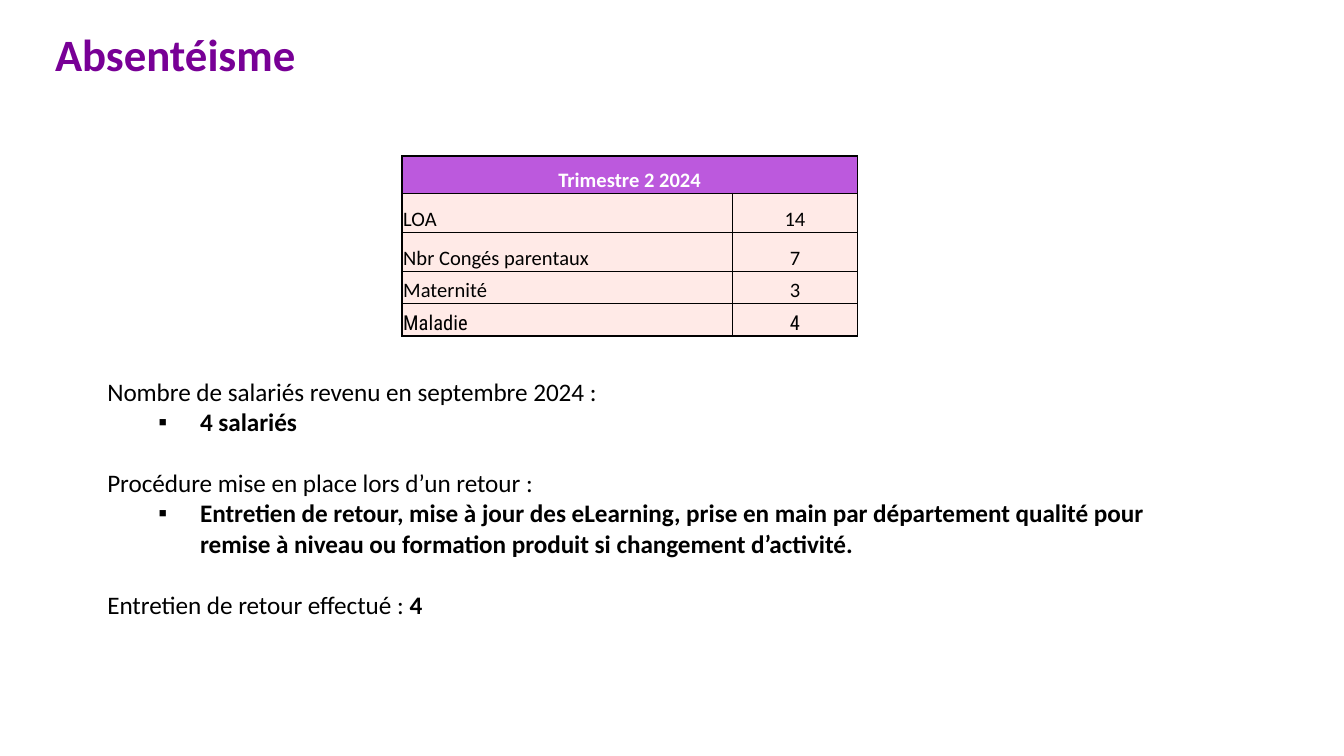
from lxml.etree import SubElement
from pptx import Presentation
from pptx.dml.color import RGBColor
from pptx.enum.text import MSO_ANCHOR as Anchor, PP_ALIGN as Align
from pptx.oxml.ns import qn
from pptx.util import Inches, Pt

PURPLE = RGBColor(0x78, 0x00, 0x96)
ORCHID = RGBColor(0xBC, 0x59, 0xDD)
BLUSH = RGBColor(0xFF, 0xEA, 0xE7)
BLACK = RGBColor(0, 0, 0)
WHITE = RGBColor(0xFF, 0xFF, 0xFF)
FONT = "Calibri"
LAST_ROW_FONT = "Roboto Condensed"


def set_font(font, size, color, bold=False, name=FONT):
    font.name, font.size, font.bold = name, Pt(size), bold
    font.color.rgb = color


def add_borders(cell):
    properties = cell._tc.get_or_add_tcPr()
    for side in ("a:lnL", "a:lnR", "a:lnT", "a:lnB"):
        line = SubElement(properties, qn(side), w=str(Pt(1)))
        fill = SubElement(line, qn("a:solidFill"))
        SubElement(fill, qn("a:srgbClr"), val=str(BLACK))


deck = Presentation()
deck.slide_width = Inches(10)
deck.slide_height = deck.slide_width * 9 // 16
page = deck.slides.add_slide(deck.slide_layouts[5])

# Title
title = page.shapes.title
title.left, title.top = Inches(0.31), Inches(0.22)
title.width, title.height = Inches(5.51), Inches(0.41)
title.text_frame.word_wrap = False
title.text_frame.vertical_anchor = Anchor.MIDDLE
title.text_frame.text = "Absentéisme"
para = title.text_frame.paragraphs[0]
para.alignment = Align.LEFT
para.line_spacing = 0.9
set_font(para.font, 24, PURPLE, bold=True)

# Absence table
rows = [
    ("Trimestre 2 2024", ""),
    ("LOA", "14"),
    ("Nbr Congés parentaux", "7"),
    ("Maternité", "3"),
    ("Maladie", "4"),
]
column_widths = (2.46, 0.93)
row_heights = (0.28, 0.29, 0.29, 0.24, 0.24)
table = page.shapes.add_table(
    len(rows), len(column_widths), Inches(2.99), Inches(1.16),
    Inches(sum(column_widths)), Inches(sum(row_heights))).table
for column, width in zip(table.columns, column_widths):
    column.width = Inches(width)
for row, height in zip(table.rows, row_heights):
    row.height = Inches(height)
table.cell(0, 0).merge(table.cell(0, 1))

for r, values in enumerate(rows):
    header = r == 0
    for c, value in enumerate(values):
        cell = table.cell(r, c)
        add_borders(cell)
        cell.fill.solid()
        cell.fill.fore_color.rgb = ORCHID if header else BLUSH
        cell.vertical_anchor = Anchor.BOTTOM
        cell.margin_left = cell.margin_right = cell.margin_top = Inches(0.01)
        cell.margin_bottom = 0
        cell.text = value
        para = cell.text_frame.paragraphs[0]
        para.alignment = Align.CENTER if header or c == 1 else Align.LEFT
        set_font(para.font, 11, WHITE if header else BLACK, bold=header,
                 name=LAST_ROW_FONT if r == len(rows) - 1 else FONT)

# Return to work: each line is (plain text, bold text); bold-only lines are bullets
lines = [
    ("Nombre de salariés revenu en septembre 2024 :", ""),
    ("", "4 salariés"),
    ("Procédure mise en place lors d’un retour :", ""),
    ("", "Entretien de retour, mise à jour des eLearning, prise en main par "
         "département qualité pour remise à niveau ou formation produit si "
         "changement d’activité."),
    ("Entretien de retour effectué : ", "4"),
]
box = page.shapes.add_textbox(Inches(0.7), Inches(2.75), Inches(7.98), Inches(1.92))
frame = box.text_frame
frame.word_wrap = True
for i, (plain, strong) in enumerate(lines):
    para = frame.paragraphs[0] if i == 0 else frame.add_paragraph()
    if not plain:
        para.level = 1
        properties = para._p.get_or_add_pPr()
        properties.set("marL", str(Inches(0.69)))
        properties.set("indent", str(Inches(-0.31)))
        SubElement(properties, qn("a:buFont"), typeface="Arial")
        SubElement(properties, qn("a:buChar"), char="▪")
    elif i > 0:
        para.space_before = Pt(16.5)
    set_font(para.font, 13.5, BLACK, bold=not plain)
    if plain:
        para.add_run().text = plain
    if strong:
        span = para.add_run()
        span.text = strong
        if plain:
            span.font.bold = True

deck.save("out.pptx")
